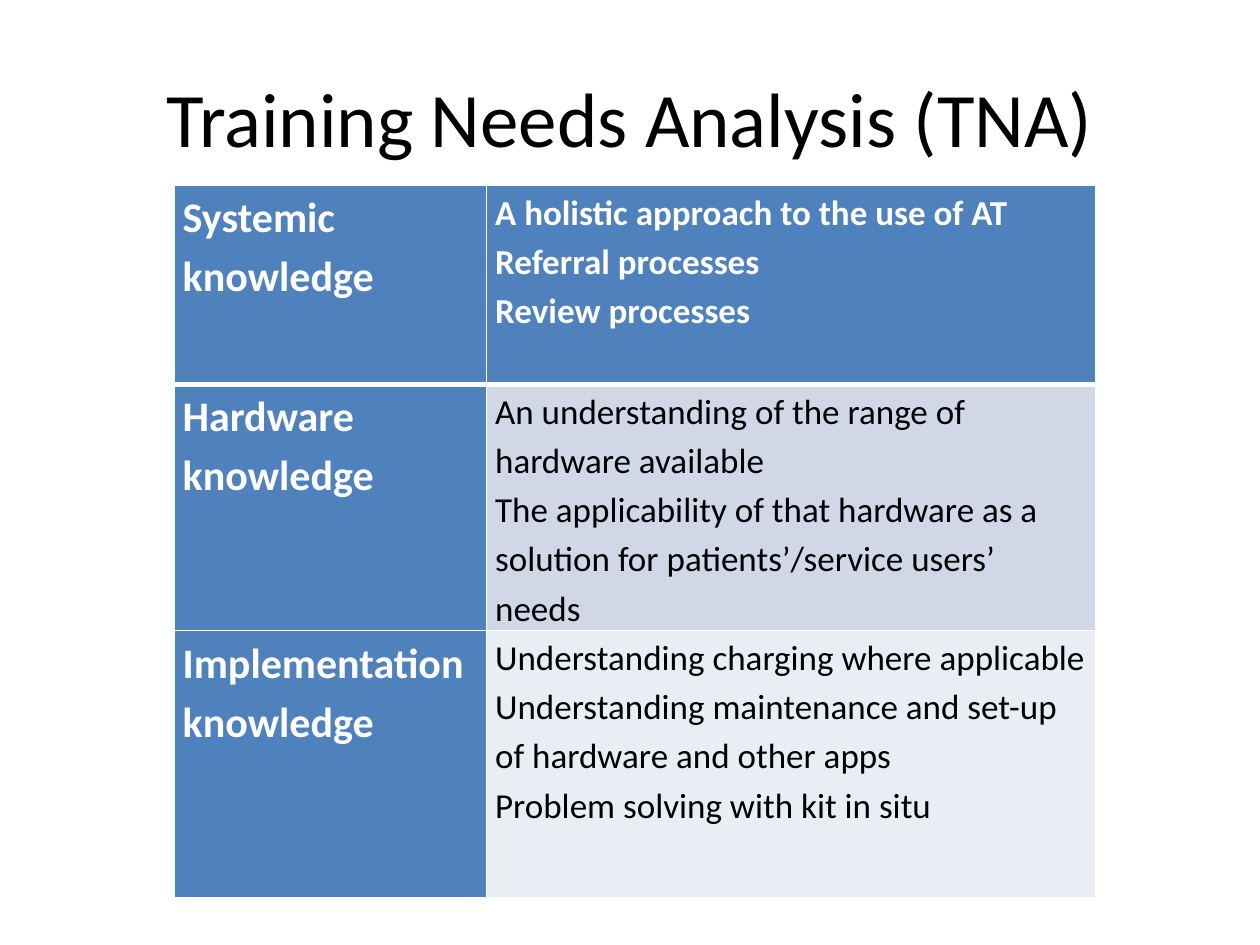
from dataclasses import dataclass

from lxml.etree import SubElement
from pptx import Presentation
from pptx.dml.color import RGBColor
from pptx.enum.text import MSO_ANCHOR, PP_ALIGN
from pptx.oxml.ns import qn
from pptx.slide import Slide
from pptx.table import _Cell
from pptx.util import Inches, Pt

COLORS = {
    "white": "FFFFFF",
    "black": "000000",
    "blue": "4F81BD",
    "band_dark": "D0D8E8",
    "band_light": "E9EDF4",
}
FONT = "Calibri"
SLIDE_WIDTH, SLIDE_HEIGHT = Inches(10), Inches(7.5)
TABLE_LEFT, TABLE_TOP = Inches(1.38), Inches(1.47)
COLUMN_WIDTHS = [Inches(2.48), Inches(4.84)]


@dataclass(frozen=True)
class CellStyle:
    """Look of one table cell."""

    fill: str
    ink: str
    size: int
    bold: bool
    space_after: int = 0


@dataclass(frozen=True)
class KnowledgeRow:
    """One knowledge area with its training needs."""

    area: str
    needs: tuple[str, ...]
    height: float
    needs_style: CellStyle
    bottom_line: int = 1


AREA_STYLE = CellStyle("blue", "white", 24, True, 10)
ROWS = [
    KnowledgeRow(
        "Systemic knowledge",
        ("A holistic approach to the use of AT", "Referral processes", "Review processes"),
        1.58,
        CellStyle("blue", "white", 20, True),
        bottom_line=3,
    ),
    KnowledgeRow(
        "Hardware knowledge",
        (
            "An understanding of the range of hardware available",
            "The applicability of that hardware as a solution for patients’/service users’ needs",
        ),
        1.58,
        CellStyle("band_dark", "black", 20, False),
    ),
    KnowledgeRow(
        "Implementation knowledge",
        (
            "Understanding charging where applicable",
            "Understanding maintenance and set-up of hardware and other apps",
            "Problem solving with kit in situ",
        ),
        2.12,
        CellStyle("band_light", "black", 20, False),
    ),
]


def color(name: str) -> RGBColor:
    """Return a named colour."""
    return RGBColor.from_string(COLORS[name])


def set_borders(cell: _Cell, top: int, bottom: int) -> None:
    """Draw white borders around a cell, with widths in points."""
    properties = cell._tc.get_or_add_tcPr()
    for side, width in {"L": 1, "R": 1, "T": top, "B": bottom}.items():
        line = SubElement(properties, qn(f"a:ln{side}"), w=str(Pt(width)))
        fill = SubElement(line, qn("a:solidFill"))
        SubElement(fill, qn("a:srgbClr"), val=COLORS["white"])


def fill_cell(cell: _Cell, lines: tuple[str, ...], style: CellStyle) -> None:
    """Write lines into a cell and format it."""
    cell.fill.solid()
    cell.fill.fore_color.rgb = color(style.fill)
    cell.margin_left = cell.margin_right = Inches(0.07)
    cell.margin_top = cell.margin_bottom = 0
    cell.text = "\n".join(lines)
    for para in cell.text_frame.paragraphs:
        para.line_spacing = 1.15
        para.space_after = Pt(style.space_after)
        para.font.name = FONT
        para.font.size = Pt(style.size)
        para.font.bold = style.bold
        para.font.color.rgb = color(style.ink)


def add_title(page: Slide, text: str) -> None:
    """Place and format the slide title."""
    title = page.shapes.title
    title.left, title.top = int(SLIDE_WIDTH * 0.05), int(SLIDE_HEIGHT * 0.04)
    title.width, title.height = int(SLIDE_WIDTH * 0.9), Inches(1.25)
    title.text_frame.text = text
    title.text_frame.vertical_anchor = MSO_ANCHOR.MIDDLE
    para = title.text_frame.paragraphs[0]
    para.alignment = PP_ALIGN.CENTER
    para.font.name = FONT
    para.font.size = Pt(44)
    para.font.color.rgb = color("black")


def add_knowledge_table(page: Slide, rows: list[KnowledgeRow]) -> None:
    """Add the table of knowledge areas and needs."""
    height = Inches(sum(row.height for row in rows))
    table = page.shapes.add_table(
        len(rows), len(COLUMN_WIDTHS), TABLE_LEFT, TABLE_TOP, sum(COLUMN_WIDTHS), height
    ).table
    table.first_col = True
    for column, width in zip(table.columns, COLUMN_WIDTHS):
        column.width = width
    top_line = 1
    for index, row in enumerate(rows):
        table.rows[index].height = Inches(row.height)
        contents = [((row.area,), AREA_STYLE), (row.needs, row.needs_style)]
        for column, (lines, style) in enumerate(contents):
            cell = table.cell(index, column)
            set_borders(cell, top_line, row.bottom_line)
            fill_cell(cell, lines, style)
        top_line = row.bottom_line


def main() -> None:
    """Build and save the slide."""
    deck = Presentation()
    deck.slide_width, deck.slide_height = SLIDE_WIDTH, SLIDE_HEIGHT
    page = deck.slides.add_slide(deck.slide_layouts.get_by_name("Title Only"))
    add_title(page, "Training Needs Analysis (TNA)")
    add_knowledge_table(page, ROWS)
    deck.save("out.pptx")


if __name__ == "__main__":
    main()
